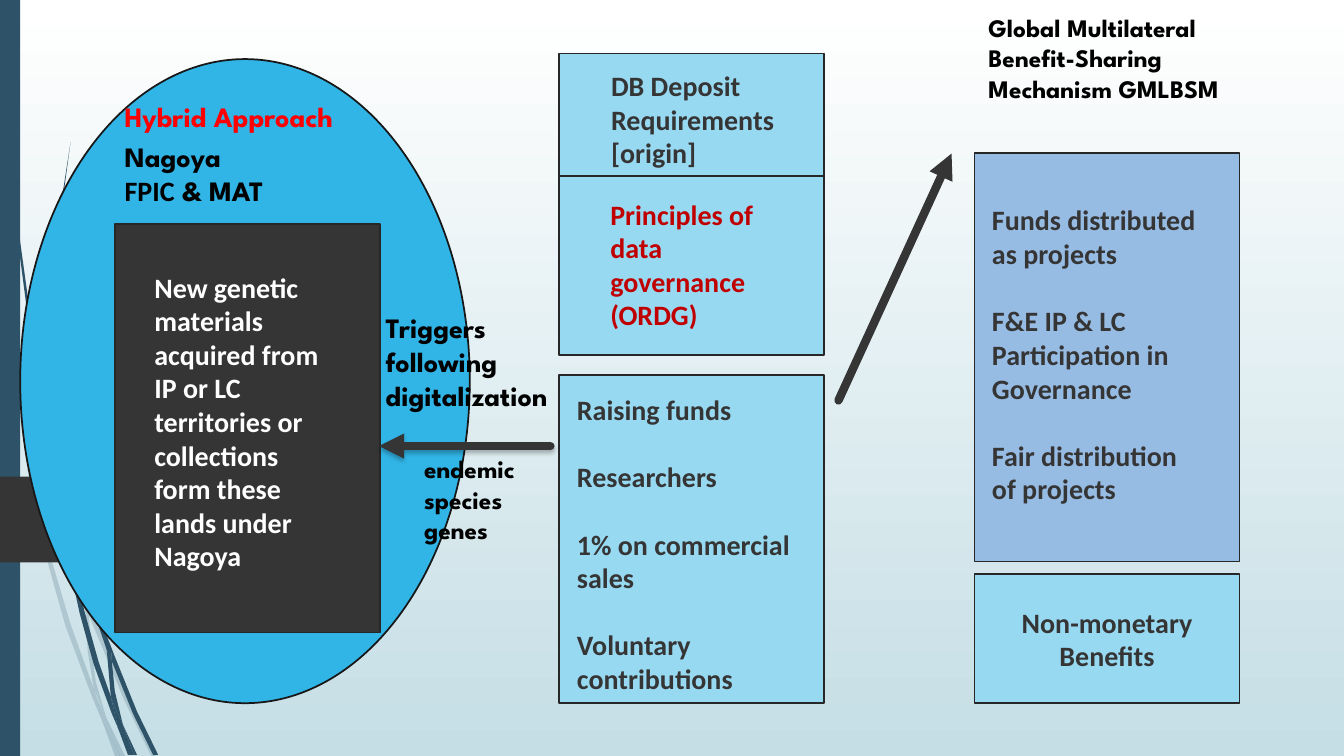
import dataclasses

import lxml.etree
import pptx
import pptx.dml.color
import pptx.enum.shapes
import pptx.enum.text
import pptx.oxml.ns
import pptx.util

Cm = pptx.util.Cm
qn = pptx.oxml.ns.qn
Kind = pptx.enum.shapes.MSO_SHAPE


@dataclasses.dataclass(frozen=True)
class Theme:
    top: str = "FFFFFF"
    base: str = "C5DEE5"
    navy: str = "2E5369"
    dark: str = "353535"
    edge: str = "272727"
    rim: str = "171717"
    oval: str = "31B4E6"
    sky: str = "98D9F2"
    blue: str = "97BCE4"
    black: str = "000000"
    white: str = "FFFFFF"
    red: str = "FF0000"
    wine: str = "C00000"
    body: str = "Calibri"
    head: str = "League Spartan"
    size: int = 20
    small: int = 18
    gap: int = 24
    thin: float = 1.25
    thick: float = 6


T = Theme()
WIDE = 6.68  # width of every box column

# Outlines of the curved stems, in hundredths of an inch
UNIT = Cm(2.54) / 100
PALE = [
    [(92, 607), (88, 596), (88, 610), (123, 694), (150, 750), (155, 750), (127, 692)],
    [(119, 750), (124, 750), (105, 711)],
    [(93, 683), (70, 619), (48, 545), (31, 469), (17, 376), (11, 350),
     (28, 470), (44, 546), (65, 621), (92, 693), (101, 714), (99, 707)],
    [(84, 599), (87, 646), (93, 683), (105, 711), (95, 676), (91, 646), (88, 610)],
    [(101, 714), (114, 750), (119, 750)],
    [(96, 692), (93, 683), (99, 707), (101, 714), (119, 750), (105, 711)],
]
DEEP = [
    [(7, 110), (17, 233), (33, 355), (57, 481), (55, 453), (36, 355),
     (19, 232), (8, 109), (5, 48), (4, 0), (3, 0), (4, 48)],
    [(88, 592), (106, 645), (106, 631), (93, 590), (60, 472), (64, 505)],
    [(113, 649), (110, 641), (111, 656), (132, 708), (152, 749), (157, 749), (136, 706)],
    [(110, 691), (98, 657), (84, 607), (72, 556), (64, 505), (57, 477),
     (68, 557), (79, 608), (93, 659), (111, 708), (117, 722), (116, 717)],
    [(60, 472), (54, 349), (58, 245), (63, 193), (70, 141),
     (62, 193), (56, 245), (52, 349), (55, 449)],
    [(133, 749), (136, 749), (122, 719)],
    [(117, 722), (127, 749), (131, 749)],
    [(106, 645), (110, 691), (116, 706), (122, 719), (114, 686), (111, 656)],
    [(106, 631), (106, 645), (111, 656), (110, 641)],
    [(116, 706), (110, 691), (117, 722), (130, 749), (133, 749), (122, 719)],
]


def tint(code):
    return pptx.dml.color.RGBColor.from_string(code)


def paint(shape, fill, line=None):
    shape.shadow.inherit = False
    shape.fill.solid()
    shape.fill.fore_color.rgb = tint(fill)
    if line:
        shape.line.color.rgb = tint(line)
        shape.line.width = pptx.util.Pt(T.thin)
    else:
        shape.line.fill.background()


def block(slide, x, y, w, h, fill, line=T.edge, kind=Kind.RECTANGLE):
    shape = slide.shapes.add_shape(kind, Cm(x), Cm(y), Cm(w), Cm(h))
    paint(shape, fill, line)
    return shape


def style(frame, color, face, size):
    for para in frame.paragraphs:
        for run in para.runs:
            run.font.name = face
            run.font.size = pptx.util.Pt(size)
            run.font.bold = True
            run.font.color.rgb = tint(color)


def label(slide, x, y, w, h, text, color=T.dark, face=T.body, size=T.size, wrap=True):
    frame = slide.shapes.add_textbox(Cm(x), Cm(y), Cm(w), Cm(h)).text_frame
    frame.word_wrap = wrap
    frame.auto_size = pptx.enum.text.MSO_AUTO_SIZE.SHAPE_TO_FIT_TEXT
    frame.text = text
    style(frame, color, face, size)
    return frame


def space(frame, rows):
    for row in rows:
        frame.paragraphs[row].space_before = pptx.util.Pt(T.gap)


def arrow(slide, x1, y1, x2, y2, shade=False):
    line = slide.shapes.add_connector(
        pptx.enum.shapes.MSO_CONNECTOR.STRAIGHT, Cm(x1), Cm(y1), Cm(x2), Cm(y2))
    line.line.color.rgb = tint(T.dark)
    line.line.width = pptx.util.Pt(T.thick)
    props = line._element.spPr
    ln = props.find(qn("a:ln"))
    ln.set("cap", "rnd")
    lxml.etree.SubElement(ln, qn("a:tailEnd"), type="triangle")
    fx = lxml.etree.SubElement(props, qn("a:effectLst"))
    if shade:
        cast = lxml.etree.SubElement(fx, qn("a:outerShdw"), blurRad="38100", dist="25400", dir="5400000")
        hue = lxml.etree.SubElement(cast, qn("a:srgbClr"), val=T.black)
        lxml.etree.SubElement(hue, qn("a:alpha"), val="25000")


def stems(slide, forms, alpha=None):
    for first, *rest in forms:
        pen = slide.shapes.build_freeform(*first, scale=UNIT)
        pen.add_line_segments(rest, close=True)
        shape = pen.convert_to_shape()
        paint(shape, T.navy)
        if alpha:
            hue = shape._element.spPr.find(qn("a:solidFill"))[0]
            lxml.etree.SubElement(hue, qn("a:alpha"), val=str(alpha * 1000))


def backdrop(slide, h):
    fill = slide.background.fill
    fill.gradient()
    fill.gradient_angle = 270
    for stop, place, code in zip(fill.gradient_stops, (0, 1), (T.top, T.base)):
        stop.position = place
        stop.color.rgb = tint(code)
    stems(slide, PALE, 20)
    stems(slide, DEEP)
    block(slide, 0, 0, 0.51, h, T.navy, None)
    block(slide, 0, 12.01, 4.85, 2.16, T.dark, None, Kind.PENTAGON)


def source(slide, x, y):
    # Oval with the new materials
    block(slide, x, y, 11.33, 16.23, T.oval, T.rim, Kind.OVAL)
    left = x + 2.38
    label(slide, left, y + 0.89, 6.45, 1.12, "Hybrid Approach", T.red, T.head, wrap=False)
    frame = label(slide, left, y + 1.9, 6.35, 1.96, "Nagoya\vFPIC", T.black, T.head)
    para = frame.paragraphs[0]
    para.add_run().text = " & MAT"
    style(frame, T.black, T.head, T.size)
    para.runs[1].font.name = T.body
    block(slide, left, y + 4.16, WIDE, 10.29, T.dark)
    label(slide, left + 0.75, y + 5.19, 5.16, 7.95,
          "New genetic materials acquired from IP or LC territories or collections "
          "form these lands under Nagoya", T.white)


def data(slide, x, y):
    # Deposit, principles and funding boxes
    block(slide, x, y + 3.07, WIDE, 4.52, T.sky)
    label(slide, x + 1.04, y + 3.49, 5.16, 3.68, "Principles of data governance (ORDG)", T.wine)
    block(slide, x, y, WIDE, 3.08, T.sky)
    label(slide, x + 1.06, y + 0.25, 4.98, 2.82, "DB Deposit Requirements\n[origin]")
    block(slide, x, y + 8.1, WIDE, 8.26, T.sky)
    frame = label(slide, x + 0.2, y + 8.42, 6.48, 7.95,
                  "Raising funds\nResearchers\n1% on commercial sales\nVoluntary contributions")
    space(frame, (1, 2, 3))


def sharing(slide, x, y):
    # Benefit-sharing column
    label(slide, x + 0.1, y + 0.01, WIDE, 3.33,
          "Global Multilateral Benefit-Sharing Mechanism GMLBSM", T.black, T.head, T.small)
    block(slide, x, y + 3.68, WIDE, 10.29, T.blue)
    frame = label(slide, x + 0.19, y + 4.81, 6.2, 7.95,
                  "Funds distributed as projects\nF&E IP & LC Participation in Governance\n"
                  "Fair distribution\nof projects")
    space(frame, (1, 2))
    frame = block(slide, x, y + 14.29, WIDE, 3.25, T.sky).text_frame
    frame.word_wrap = True
    frame.vertical_anchor = pptx.enum.text.MSO_ANCHOR.MIDDLE
    frame.text = "Non-monetary Benefits"
    frame.paragraphs[0].alignment = pptx.enum.text.PP_ALIGN.CENTER
    style(frame, T.dark, T.body, T.size)


def links(slide, x, y):
    # Arrows and the trigger notes
    arrow(slide, x + 4.32, y, x, y, shade=True)
    arrow(slide, x + 11.58, y - 1.15, x + 14.43, y - 7.37)
    label(slide, x - 0.08, y - 3.53, 4.98, 2.82, "Triggers\nfollowing digitalization", T.black, T.head)
    label(slide, x + 0.89, y + 0.07, 3.48, 2.57, "endemic\nspecies\ngenes", T.black, T.head, T.small)


def main():
    deck = pptx.Presentation()
    deck.slide_width, deck.slide_height = Cm(33.87), Cm(19.05)
    slide = deck.slides.add_slide(deck.slide_layouts[6])
    backdrop(slide, 19.05)
    source(slide, 0.51, 1.49)
    data(slide, 14.09, 1.35)
    sharing(slide, 24.56, 0.18)
    links(slide, 9.55, 11.24)
    deck.save("out.pptx")


if __name__ == "__main__":
    main()
